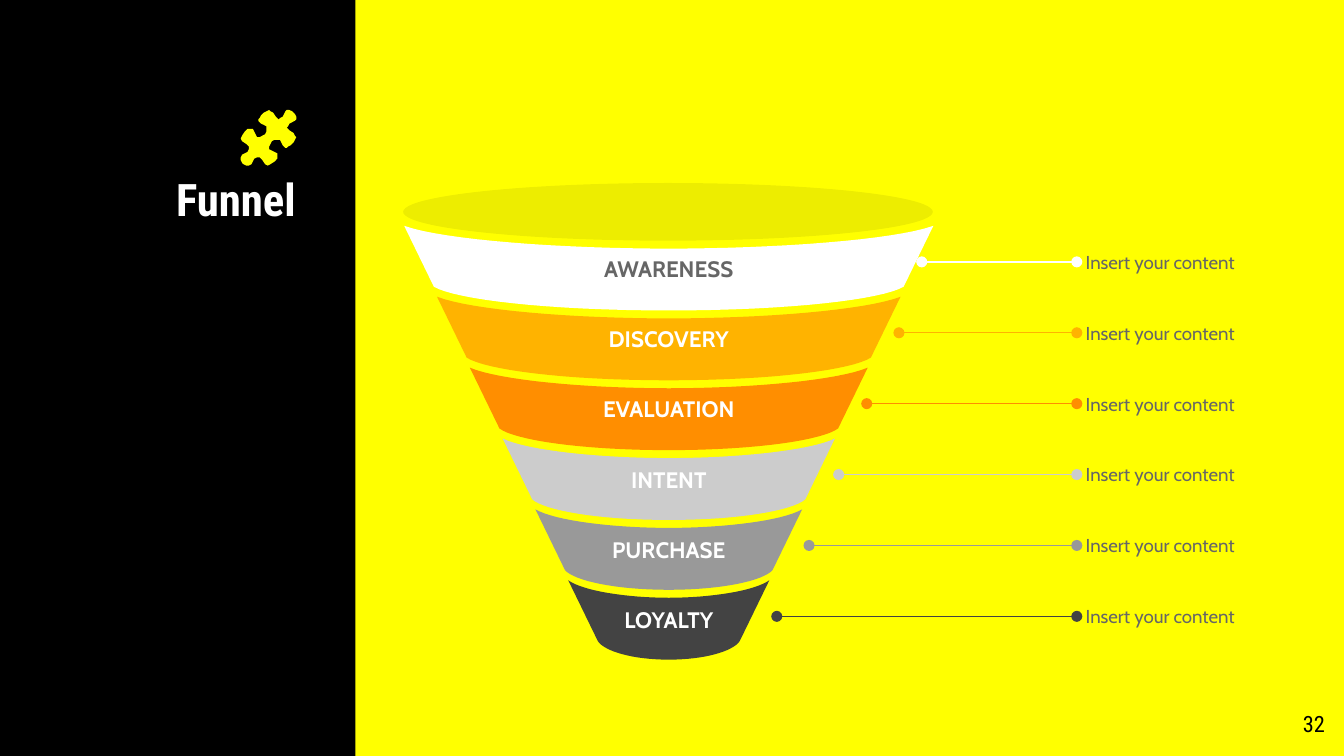
from pptx import Presentation
from pptx.dml.color import RGBColor
from pptx.enum.shapes import MSO_CONNECTOR as Connector, MSO_SHAPE as Shape
from pptx.enum.text import MSO_ANCHOR as Anchor, PP_ALIGN as Align
from pptx.oxml.ns import qn
from pptx.util import Cm, Pt
from lxml.etree import SubElement

BLACK = RGBColor(0x00, 0x00, 0x00)
WHITE = RGBColor(0xFF, 0xFF, 0xFF)
YELLOW = RGBColor(0xFF, 0xFF, 0x00)
AMBER = RGBColor(0xFF, 0xB3, 0x00)
ORANGE = RGBColor(0xFF, 0x8E, 0x00)
LIGHT_GREY = RGBColor(0xCC, 0xCC, 0xCC)
MID_GREY = RGBColor(0x99, 0x99, 0x99)
TEXT_GREY = RGBColor(0x66, 0x66, 0x66)
CHARCOAL = RGBColor(0x43, 0x43, 0x43)

HEADING_FONT, BODY_FONT = "Roboto Condensed", "Cabin"

# label, band colour, label colour, start of the leader line in cm
STAGES = [
    ("AWARENESS", WHITE, TEXT_GREY, 17.42),
    ("DISCOVERY", AMBER, WHITE, 16.99),
    ("EVALUATION", ORANGE, WHITE, 16.38),
    ("INTENT", LIGHT_GREY, WHITE, 15.85),
    ("PURCHASE", MID_GREY, WHITE, 15.29),
    ("LOYALTY", CHARCOAL, WHITE, 14.68),
]
CENTRE = 12.64
PITCH = 1.34

# Upper left half of the puzzle piece, on a 41 x 41 grid
PUZZLE_HALF = [
    (39, 2), (38, 1), (36, 0), (34, 0), (33, 1), (32, 3), (31, 5), (29, 6),
    (28, 7), (27, 6), (26, 5), (24, 2), (22, 1), (21, 0), (19, 1), (17, 2),
    (15, 4), (14, 6), (13, 7), (13, 8), (14, 9), (15, 10), (17, 11), (19, 12),
    (19, 14), (19, 16), (18, 18), (16, 19), (14, 20), (12, 20), (11, 18),
    (10, 16), (9, 14), (7, 14), (5, 14), (3, 16), (1, 19), (0, 21), (1, 23),
    (4, 25), (6, 27), (6, 29), (5, 31), (3, 32), (1, 33), (0, 35), (0, 37),
    (1, 39),
]
PUZZLE_GRID = 41


def write(frame, text, font=BODY_FONT, size=12, color=WHITE, bold=False,
          align=Align.LEFT, anchor=Anchor.TOP, spacing=None, margins=(0, 0)):
    frame.word_wrap = True
    frame.vertical_anchor = anchor
    frame.margin_left = frame.margin_right = Cm(margins[0])
    frame.margin_top = frame.margin_bottom = Cm(margins[1])
    paragraph = frame.paragraphs[0]
    paragraph.alignment = align
    paragraph.line_spacing = spacing
    run = paragraph.add_run()
    run.text = text
    run.font.name, run.font.size, run.font.bold = font, Pt(size), bold
    run.font.color.rgb = color


def arc(half_width, top, bottom, shoulder, belly, steps=16):
    """Sagging curve from the left corner to the right one, as points in cm.

    shoulder is the first control point and belly the reach of the second,
    as fractions of the half width and the sag.
    """
    right = []
    for step in range(steps + 1):
        t = step / steps
        corner, first, second, last = (
            (1 - t) ** 3, 3 * t * (1 - t) ** 2, 3 * t ** 2 * (1 - t), t ** 3)
        x = half_width * (corner + first * shoulder[0] + second * belly)
        y = top + (bottom - top) * (first * shoulder[1] + second + last)
        right.append((x, y))
    left = [(CENTRE - x, y) for x, y in right]
    return left + [(CENTRE + x, y) for x, y in right[-2::-1]]


def band_outline(index):
    top = 4.27 + PITCH * index
    half_width = 5 - 0.62 * index
    top_sag = 4.70 + 1.32 * index
    upper = arc(half_width, top, top_sag, (0.85, 0.62), 0.41)
    lower = arc(half_width - 0.56, top + 1.15, top_sag + 1.17, (0.91, 0.53), 0.52)
    return upper + lower[::-1]


def puzzle_outline(left, top, size):
    """Half the piece and its mirror image across the diagonal."""
    mirrored = [(PUZZLE_GRID - y, PUZZLE_GRID - x) for x, y in PUZZLE_HALF[::-1]]
    scale = size / PUZZLE_GRID
    return [(left + x * scale, top + y * scale) for x, y in PUZZLE_HALF + mirrored]


class SlideBuilder:
    def __init__(self, slide, background):
        self.slide = slide
        self.shapes = slide.shapes
        slide.background.fill.solid()
        slide.background.fill.fore_color.rgb = background

    def _paint(self, shape, color, opacity=None):
        shape.shadow.inherit = False
        shape.fill.solid()
        shape.fill.fore_color.rgb = color
        shape.line.fill.background()
        if opacity is not None:
            tint = shape.fill._xPr.find(qn("a:solidFill"))[0]
            SubElement(tint, qn("a:alpha"), val=str(opacity * 1000))
        return shape

    def preset(self, kind, box, color, opacity=None, within=None):
        shapes = within or self.shapes
        return self._paint(shapes.add_shape(kind, *map(Cm, box)), color, opacity)

    def outline(self, points, color, within=None):
        first, *rest = [(Cm(x), Cm(y)) for x, y in points]
        builder = (within or self.shapes).build_freeform(*first)
        builder.add_line_segments(rest, close=True)
        return self._paint(builder.convert_to_shape(), color)

    def text(self, box, text, **style):
        write(self.shapes.add_textbox(*map(Cm, box)).text_frame, text, **style)

    def leader(self, start, end, y, color):
        """Level line with a dot at each end."""
        line = self.shapes.add_connector(
            Connector.STRAIGHT, Cm(start), Cm(y), Cm(end), Cm(y))
        line.line.color.rgb = color
        line.line.width = Pt(0.75)
        stroke = line.line._get_or_add_ln()
        for dot in ("a:headEnd", "a:tailEnd"):
            SubElement(stroke, qn(dot), type="oval")
        SubElement(line._element.spPr, qn("a:effectLst"))


def main():
    deck = Presentation()
    deck.slide_width, deck.slide_height = Cm(25.4), Cm(14.29)
    page = SlideBuilder(deck.slides.add_slide(deck.slide_layouts[6]), YELLOW)

    page.preset(Shape.RECTANGLE, (0, 0, 6.72, 14.29), BLACK)
    page.text((1.12, 3.12, 4.72, 4.11), "Funnel", font=HEADING_FONT, size=24,
              bold=True, align=Align.RIGHT, spacing=0.9, margins=(0.25, 0.25))
    page.text((23.77, 13.18, 1.52, 1.09), "32", font=HEADING_FONT,
              color=BLACK, align=Align.RIGHT, margins=(0.25, 0.25))

    funnel = page.shapes.add_group_shape().shapes
    for index, (label, band_color, label_color, _) in enumerate(STAGES):
        band = page.outline(band_outline(index), band_color, within=funnel)
        write(band.text_frame, label, color=label_color, bold=True,
              align=Align.CENTER, anchor=Anchor.MIDDLE, margins=(0.18, 0.1))
    page.preset(Shape.OVAL, (7.62, 3.46, 10.01, 1.09), BLACK, opacity=7, within=funnel)

    for index, (_, band_color, _, leader_start) in enumerate(STAGES):
        y = 4.95 + PITCH * index
        page.leader(leader_start, 20.35, y, band_color)
        page.text((20.52, y - 0.48, 3.81, 0.96), "Insert your content",
                  size=10, color=TEXT_GREY, anchor=Anchor.MIDDLE)

    page.outline(puzzle_outline(4.55, 2.08, 1.05), YELLOW)
    deck.save("out.pptx")


if __name__ == "__main__":
    main()
